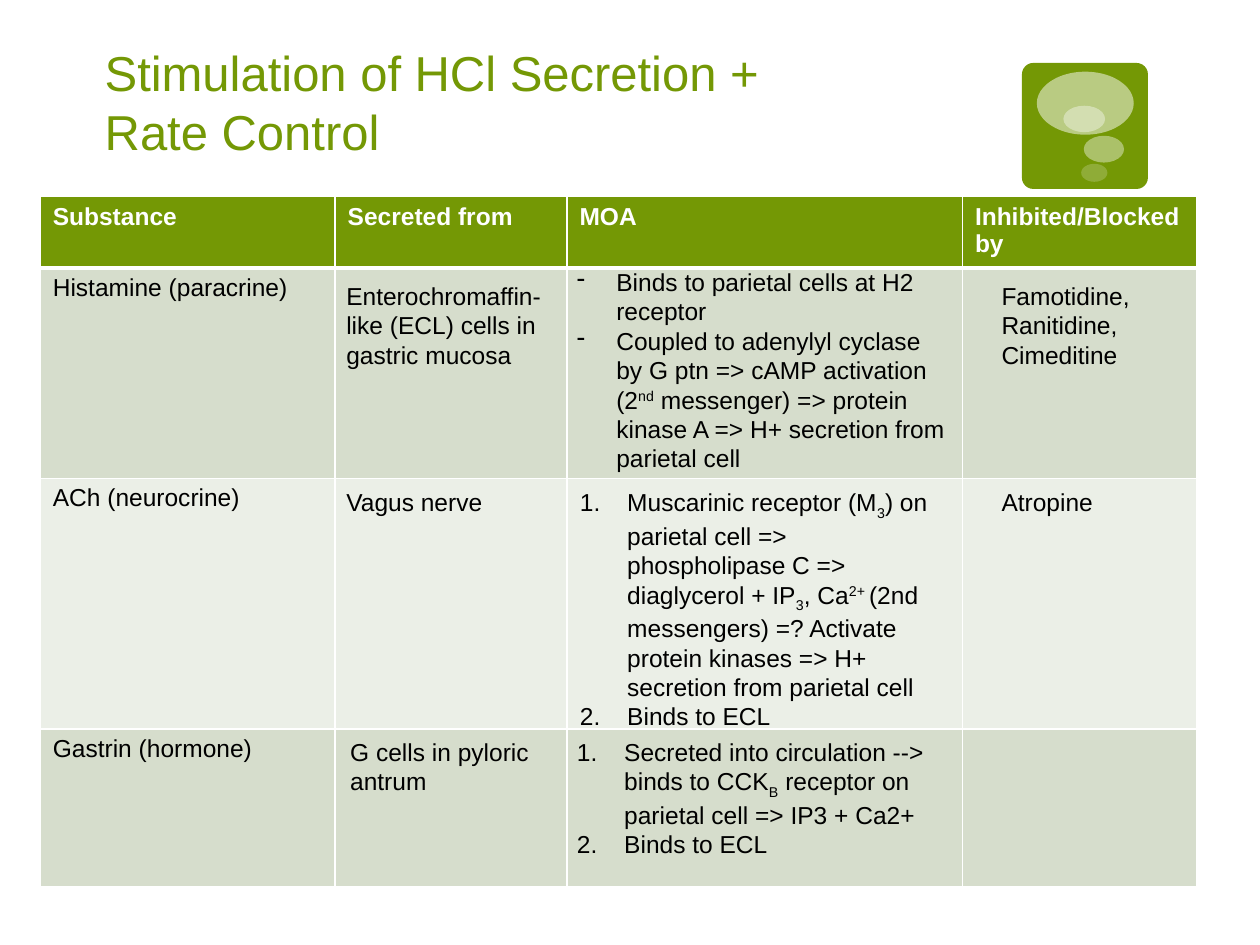
from lxml.etree import SubElement
from pptx import Presentation
from pptx.dml.color import RGBColor
from pptx.enum.shapes import MSO_SHAPE
from pptx.enum.text import MSO_ANCHOR, MSO_AUTO_SIZE
from pptx.oxml.ns import qn
from pptx.util import Pt

GREEN, WHITE, BLACK = "749805", "FFFFFF", "000000"
BANDS = ["D6DDCC", "EBEFE7"]
SUPER, SUB = 30, -25

TITLE = "Stimulation of HCl Secretion + Rate Control"
HEADINGS = ["Substance", "Secreted from", "MOA", "Inhibited/Blocked by"]
SUBSTANCES = ["Histamine (paracrine)", "ACh (neurocrine)", "Gastrin (hormone)"]
COLUMN_WIDTHS = [168.5, 132.5, 226, 134]
ROW_HEIGHTS = [38.2, 120.2, 143.3, 90]
TABLE_LEFT, TABLE_TOP = 23, 112.3

DASH = ("buChar", {"char": "-"}, 22.5)
NUMBER = ("buAutoNum", {"type": "arabicPeriod"}, 27)

NOTES = [
    (190.8, 157, 131, 75, None, [["Enterochromaffin-like (ECL) cells in gastric mucosa"]]),
    (322.6, 149, 226.8, 126, DASH, [
        ["Binds to parietal cells at H2 receptor"],
        ["Coupled to adenylyl cyclase by G ptn => cAMP activation (2", ("nd", SUPER),
         " messenger) => protein kinase A => H+ secretion from parietal cell"],
    ]),
    (565.2, 157, 102.2, 58.3, None, [["Famotidine, Ranitidine, Cimeditine"]]),
    (190.8, 275, 131, 24.5, None, [["Vagus nerve"]]),
    (324.3, 275, 226.8, 143.3, NUMBER, [
        ["Muscarinic receptor (M", ("3", SUB),
         ") on parietal cell => phospholipase C => diaglycerol + IP", ("3", SUB),
         ", Ca", ("2+ ", SUPER),
         "(2nd messengers) =? Activate protein kinases => H+ secretion from parietal cell"],
        ["Binds to ECL"],
    ]),
    (565.2, 275, 102.2, 24.5, None, [["Atropine"]]),
    (193, 417.6, 131, 41, None, [["G cells in pyloric antrum"]]),
    (322.6, 417.6, 226.8, 75, NUMBER, [
        ["Secreted into circulation --> binds to CCK", ("B", SUB),
         " receptor on parietal cell => IP3 + Ca2+"],
        ["Binds to ECL"],
    ]),
]

BADGE = (584, 36, 72, 72)
BUBBLES = [
    (592.5, 41, 55.4, 36, 50),
    (619.3, 77.6, 23, 15.3, 40),
    (617.8, 93.6, 15, 10.3, 20),
    (607.7, 60.4, 23.8, 15.1, 38),
]


def color(value):
    return RGBColor.from_string(value)


def set_attributes(target, **values):
    for name, value in values.items():
        setattr(target, name, value)


def style(font, size, value, bold=False):
    set_attributes(font, name="Arial", size=Pt(size), bold=bold)
    font.color.rgb = color(value)


def add_icon_part(slide, kind, box, value, alpha=100):
    shape = slide.shapes.add_shape(kind, *map(Pt, box))
    shape.shadow.inherit = False
    shape.fill.solid()
    shape.fill.fore_color.rgb = color(value)
    shape.line.fill.background()
    if alpha < 100:
        fill_color = shape._element.spPr.find(".//" + qn("a:srgbClr"))
        SubElement(fill_color, qn("a:alpha"), val=str(alpha * 1000))
    return shape


def add_text(slide, box, paragraphs, size, value, bullet=None, **frame_format):
    frame = slide.shapes.add_textbox(*map(Pt, box)).text_frame
    set_attributes(frame, word_wrap=True, **frame_format)
    for index, runs in enumerate(paragraphs):
        paragraph = frame.add_paragraph() if index else frame.paragraphs[0]
        if bullet:
            tag, attributes, indent = bullet
            properties = paragraph._p.get_or_add_pPr()
            properties.set("marL", str(Pt(indent)))
            properties.set("indent", str(-Pt(indent)))
            SubElement(properties, qn("a:" + tag), **attributes)
        for item in runs:
            text, baseline = (item, 0) if isinstance(item, str) else item
            run = paragraph.add_run()
            run.text = text
            style(run.font, size, value)
            if baseline:
                run._r.get_or_add_rPr().set("baseline", str(baseline * 1000))


def add_borders(cell, widths):
    properties = cell._tc.get_or_add_tcPr()
    for side, width in widths.items():
        line = SubElement(properties, qn("a:ln" + side), w=str(Pt(width)))
        fill = SubElement(line, qn("a:solidFill"))
        SubElement(fill, qn("a:srgbClr"), val=WHITE)


def add_substance_table(slide):
    rows = [HEADINGS] + [[name, "", "", ""] for name in SUBSTANCES]
    box = (TABLE_LEFT, TABLE_TOP, sum(COLUMN_WIDTHS), sum(ROW_HEIGHTS))
    table = slide.shapes.add_table(len(rows), len(HEADINGS), *map(Pt, box)).table
    for column, width in zip(table.columns, COLUMN_WIDTHS):
        column.width = Pt(width)
    for index, (row, height, texts) in enumerate(zip(table.rows, ROW_HEIGHTS, rows)):
        row.height = Pt(height)
        header = index == 0
        for cell, text in zip(row.cells, texts):
            add_borders(cell, {"L": 1, "R": 1, "T": 3 if index == 1 else 1, "B": 3 if header else 1})
            cell.fill.solid()
            cell.fill.fore_color.rgb = color(GREEN if header else BANDS[(index - 1) % 2])
            cell.text = text
            style(cell.text_frame.paragraphs[0].font, 14, WHITE if header else BLACK, header)


def main():
    presentation = Presentation()
    set_attributes(presentation, slide_width=Pt(720), slide_height=Pt(540))
    slide = presentation.slides.add_slide(presentation.slide_layouts[6])

    badge = add_icon_part(slide, MSO_SHAPE.ROUNDED_RECTANGLE, BADGE, GREEN)
    badge.adjustments[0] = 0.09
    for *box, alpha in BUBBLES:
        add_icon_part(slide, MSO_SHAPE.OVAL, box, WHITE, alpha)

    add_text(slide, (56.2, 15.8, 418.3, 79.2), [[TITLE]], 28, GREEN,
             vertical_anchor=MSO_ANCHOR.BOTTOM, margin_left=Pt(3.6))
    add_substance_table(slide)
    for *box, bullet, paragraphs in NOTES:
        add_text(slide, box, paragraphs, 14, BLACK, bullet,
                 auto_size=MSO_AUTO_SIZE.SHAPE_TO_FIT_TEXT)

    presentation.save("out.pptx")


if __name__ == "__main__":
    main()
